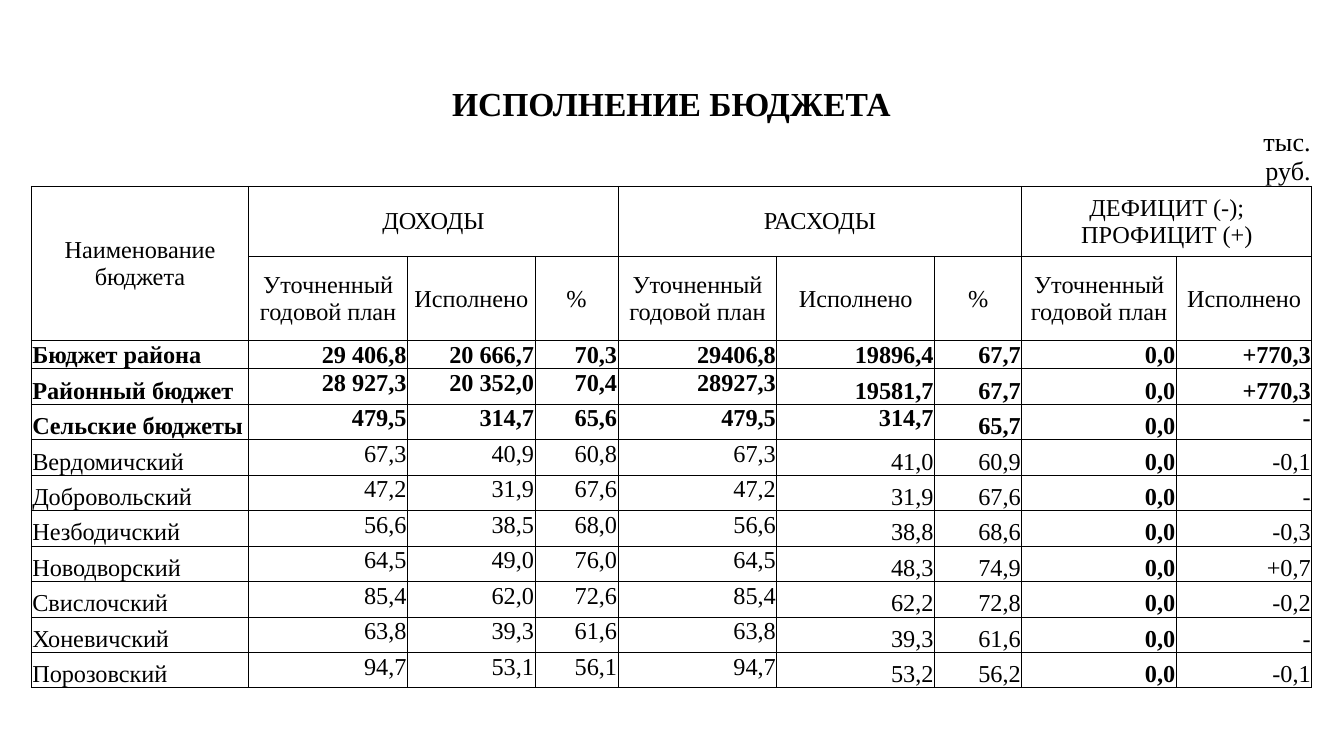
from lxml.etree import SubElement
from pptx import Presentation
from pptx.dml.color import RGBColor
from pptx.enum.text import MSO_ANCHOR as Anchor, PP_ALIGN as Align
from pptx.oxml.ns import qn
from pptx.util import Cm, Pt

BLACK = RGBColor(0, 0, 0)
FONT = "Times New Roman"

TITLE = "ИСПОЛНЕНИЕ БЮДЖЕТА"
UNIT = " тыс. руб."
NAME_HEADING = "Наименование бюджета"
GROUPS = [("ДОХОДЫ", 1, 5), ("РАСХОДЫ", 6, 10), ("ДЕФИЦИТ (-); ПРОФИЦИТ (+)", 11, 13)]
PLAN, DONE, PERCENT = "Уточненный годовой план", "Исполнено", "%"
HEADINGS = [PLAN, DONE, PERCENT, PLAN, DONE, PERCENT, PLAN, DONE]
BUDGETS = [
    ("Бюджет района", "29 406,8", "20 666,7", "70,3", "29406,8", "19896,4", "67,7", "0,0", "+770,3"),
    ("Районный бюджет", "28 927,3", "20 352,0", "70,4", "28927,3", "19581,7", "67,7", "0,0", "+770,3"),
    ("Сельские бюджеты", "479,5", "314,7", "65,6", "479,5", "314,7", "65,7", "0,0", "-"),
    ("Вердомичский", "67,3", "40,9", "60,8", "67,3", "41,0", "60,9", "0,0", "-0,1"),
    ("Добровольский", "47,2", "31,9", "67,6", "47,2", "31,9", "67,6", "0,0", "-"),
    ("Незбодичский", "56,6", "38,5", "68,0", "56,6", "38,8", "68,6", "0,0", "-0,3"),
    ("Новодворский", "64,5", "49,0", "76,0", "64,5", "48,3", "74,9", "0,0", "+0,7"),
    ("Свислочский", "85,4", "62,0", "72,6", "85,4", "62,2", "72,8", "0,0", "-0,2"),
    ("Хоневичский", "63,8", "39,3", "61,6", "63,8", "39,3", "61,6", "0,0", "-"),
    ("Порозовский", "94,7", "53,1", "56,1", "94,7", "53,2", "56,2", "0,0", "-0,1"),
]
TOTAL_ROWS = 3
RURAL_ROW = 2
DEFICIT_PLAN = 7
TOP_FIELDS = {1, 2, 3, 4}
RURAL_TOP_FIELDS = TOP_FIELDS | {5, 8}

COLUMN_WIDTHS = [4.11, 2.57, 0.43, 1.85, 0.56, 1.57, 3, 0.36, 2.29, 0.33, 1.65, 2.92, 0.58, 1.98]
ROW_HEIGHTS = [0.86, 0.69, 1.32, 1.6, 0.53] + [0.67] * (len(BUDGETS) - 1)
FIELD_SPANS = [(0, 0), (1, 2), (3, 4), (5, 5), (6, 6), (7, 9), (10, 10), (11, 11), (12, 13)]
UNIT_ROW_SPANS = [(2, 3), (4, 5), (6, 7), (9, 10), (11, 12)]
TITLE_ROW, UNIT_ROW, GROUP_ROW, HEADING_ROW, FIRST_BUDGET_ROW = range(5)
LAST_COLUMN = len(COLUMN_WIDTHS) - 1


def add_border(cell, side):
    line = SubElement(cell._tc.get_or_add_tcPr(), qn(f"a:{side}"), w=str(Pt(0.5)))
    fill = SubElement(line, qn("a:solidFill"))
    SubElement(fill, qn("a:srgbClr"), val=str(BLACK))


def merge(table, row, first, last, last_row=None):
    last_row = row if last_row is None else last_row
    if (row, first) != (last_row, last):
        table.cell(row, first).merge(table.cell(last_row, last))
    return table.cell(row, first)


def write(cell, text, size=13, bold=False, align=Align.CENTER, anchor=Anchor.MIDDLE):
    cell.vertical_anchor = anchor
    paragraph = cell.text_frame.paragraphs[0]
    paragraph.alignment = align
    run = paragraph.add_run()
    run.text = text
    run.font.name = FONT
    run.font.size = Pt(size)
    run.font.bold = bold
    run.font.color.rgb = BLACK


def format_cells(table):
    for row_index, row in enumerate(table.rows):
        sides = ["lnB"] if row_index == UNIT_ROW else ["lnL", "lnR", "lnT", "lnB"]
        for cell in row.cells:
            cell.margin_left = cell.margin_right = cell.margin_top = Cm(0.02)
            cell.margin_bottom = 0
            if row_index != TITLE_ROW:
                for side in sides:
                    add_border(cell, side)
            cell.fill.background()


def fill_headings(table):
    write(merge(table, TITLE_ROW, 0, LAST_COLUMN), TITLE, size=18, bold=True)
    for first, last in UNIT_ROW_SPANS:
        merge(table, UNIT_ROW, first, last)
    write(table.cell(UNIT_ROW, LAST_COLUMN), UNIT, size=14, align=Align.RIGHT, anchor=Anchor.BOTTOM)
    write(merge(table, GROUP_ROW, 0, 0, last_row=HEADING_ROW), NAME_HEADING)
    for text, first, last in GROUPS:
        write(merge(table, GROUP_ROW, first, last), text)
    for text, (first, last) in zip(HEADINGS, FIELD_SPANS[1:]):
        write(merge(table, HEADING_ROW, first, last), text)


def fill_budgets(table):
    for index, budget in enumerate(BUDGETS):
        top_fields = RURAL_TOP_FIELDS if index == RURAL_ROW else TOP_FIELDS
        for field, (text, (first, last)) in enumerate(zip(budget, FIELD_SPANS)):
            write(
                merge(table, FIRST_BUDGET_ROW + index, first, last),
                text,
                bold=index < TOTAL_ROWS or field == DEFICIT_PLAN,
                align=Align.RIGHT if field else Align.LEFT,
                anchor=Anchor.TOP if field in top_fields else Anchor.BOTTOM,
            )


def main():
    presentation = Presentation()
    presentation.slide_width, presentation.slide_height = Cm(25.4), Cm(14.29)
    slide = presentation.slides.add_slide(presentation.slide_layouts[6])
    table = slide.shapes.add_table(
        len(ROW_HEIGHTS), len(COLUMN_WIDTHS), Cm(0.59), Cm(1.55),
        Cm(sum(COLUMN_WIDTHS)), Cm(sum(ROW_HEIGHTS)),
    ).table
    table.first_row = table.horz_banding = False
    for column, width in zip(table.columns, COLUMN_WIDTHS):
        column.width = Cm(width)
    for row, height in zip(table.rows, ROW_HEIGHTS):
        row.height = Cm(height)
    format_cells(table)
    fill_headings(table)
    fill_budgets(table)
    presentation.save("out.pptx")


if __name__ == "__main__":
    main()
